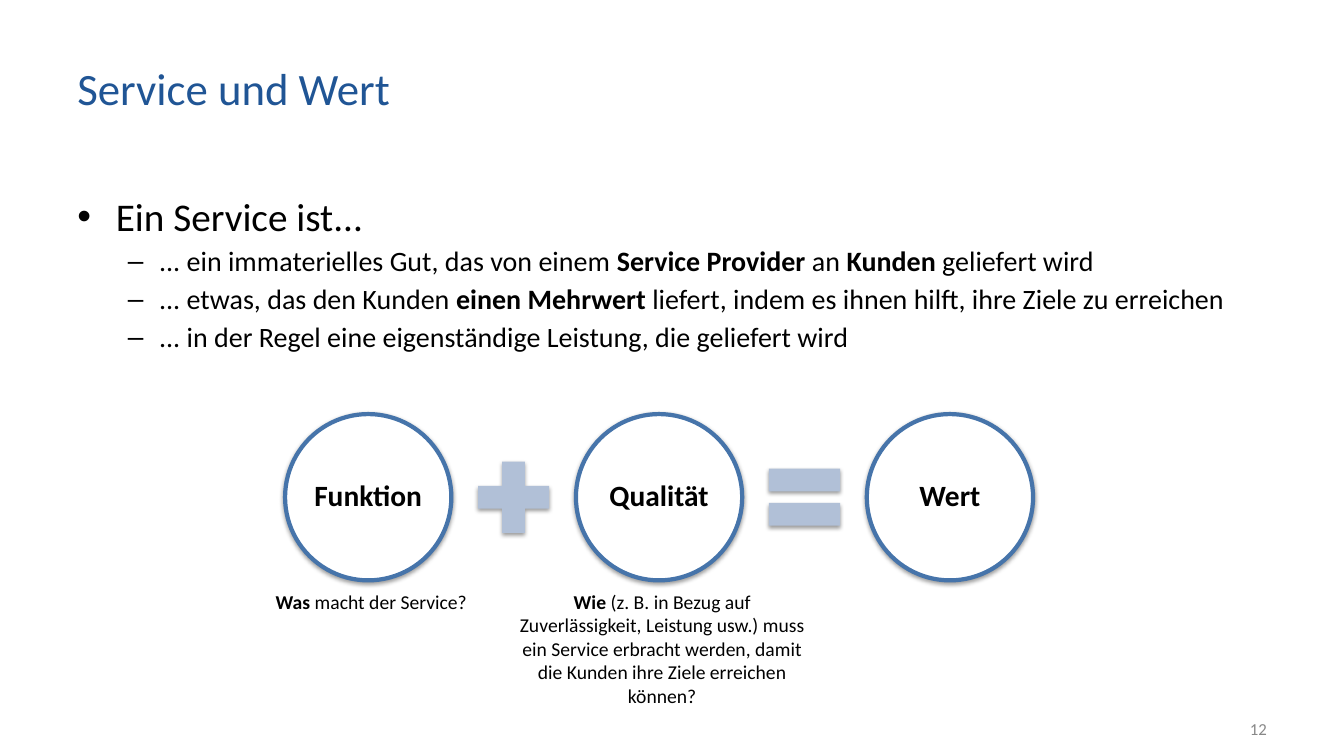
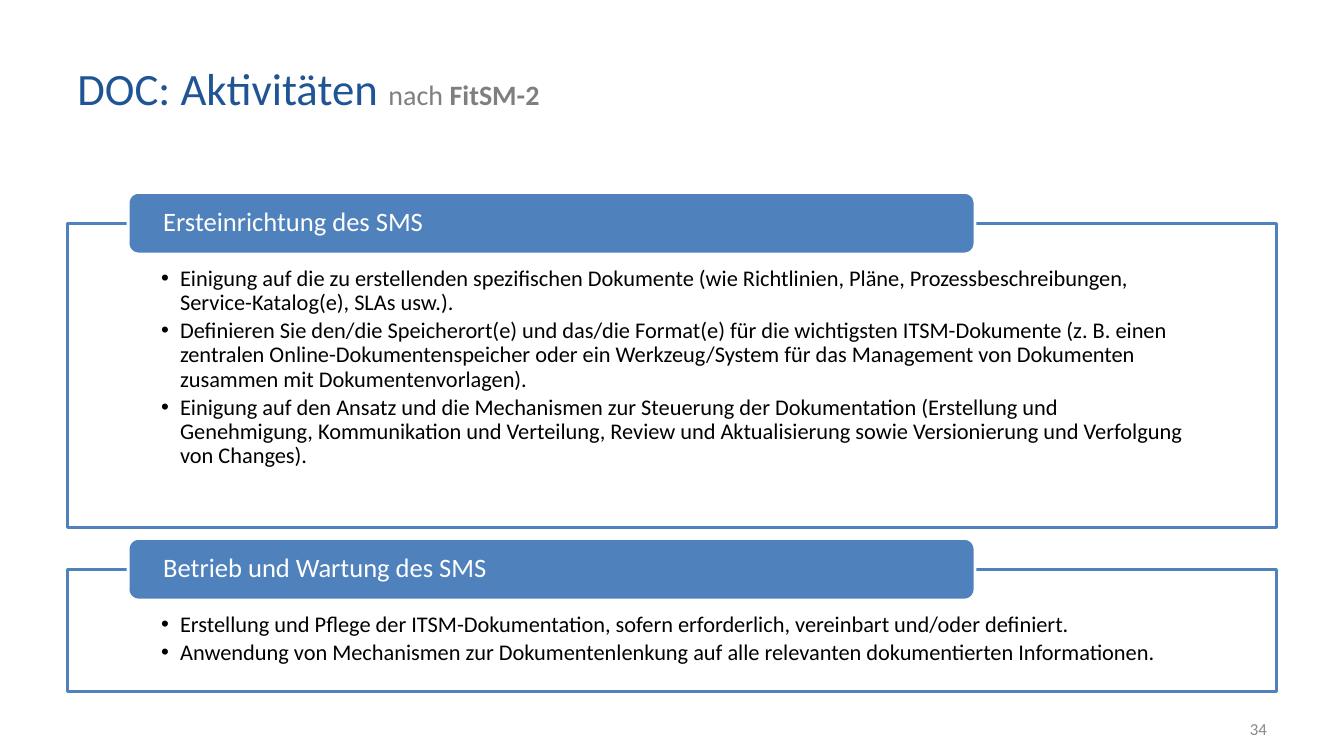
"""Builds two slides on service value and documentation activities."""
from lxml import etree
from pptx import Presentation
from pptx.dml.color import RGBColor
from pptx.enum.shapes import MSO_SHAPE
from pptx.enum.text import MSO_ANCHOR, MSO_AUTO_SIZE, PP_ALIGN
from pptx.oxml.ns import qn
from pptx.util import Cm, Pt

OVAL, RECT, ROUNDED = MSO_SHAPE.OVAL, MSO_SHAPE.RECTANGLE, MSO_SHAPE.ROUNDED_RECTANGLE
PLUS, EQUAL = MSO_SHAPE.MATH_PLUS, MSO_SHAPE.MATH_EQUAL
TOP, MIDDLE = MSO_ANCHOR.TOP, MSO_ANCHOR.MIDDLE
LEFT, CENTER, RIGHT = PP_ALIGN.LEFT, PP_ALIGN.CENTER, PP_ALIGN.RIGHT
NO_FIT = MSO_AUTO_SIZE.NONE
TITLE_AND_BODY, TITLE_ONLY = 1, 5

FONT = "Calibri"
COLORS = {
    "title": "205595", "muted": "7F7F7F", "number": "888888", "text": "000000",
    "white": "FFFFFF", "ring": "4674AA", "operator": "B1C0D7", "panel": "4F81BD",
}
MARGIN, CONTENT_WIDTH = 1.7, 30.48

VALUE_TITLE = "Service und Wert"
VALUE_LEAD = "Ein Service ist..."
VALUE_POINTS = [
    "... ein immaterielles Gut, das von einem *Service Provider *an *Kunden *geliefert wird",
    "... etwas, das den Kunden *einen Mehrwert *liefert, indem es ihnen hilft, ihre Ziele zu erreichen",
    "... in der Regel eine eigenständige Leistung, die geliefert wird",
]
VALUE_TERMS = ["Funktion", "Qualität", "Wert"]
OPERATORS = [(PLUS, [0.235]), (EQUAL, [0.235, 0.118])]
CAPTIONS = [
    ("*Was *macht der Service?", 7.04, 0.84),
    ("*Wie *(z. B. in Bezug auf Zuverlässigkeit, Leistung usw.) muss ein Service "
     "erbracht werden, damit die Kunden ihre Ziele erreichen können?", 7.85, 3.23),
]
ACTIVITY_TITLE = "DOC: Aktivitäten "
ACTIVITY_SOURCE = "nach *FitSM-2"
PANELS = [
    ("Ersteinrichtung des SMS", 7.65, [
        "Einigung auf die zu erstellenden spezifischen Dokumente (wie Richtlinien, Pläne, "
        "Prozessbeschreibungen, Service-Katalog(e), SLAs usw.).",
        "Definieren Sie den/die Speicherort(e) und das/die Format(e) für die wichtigsten "
        "ITSM-Dokumente (z. B. einen zentralen Online-Dokumentenspeicher oder ein "
        "Werkzeug/System für das Management von Dokumenten zusammen mit Dokumentenvorlagen).",
        "Einigung auf den Ansatz und die Mechanismen zur Steuerung der Dokumentation "
        "(Erstellung und Genehmigung, Kommunikation und Verteilung, Review und "
        "Aktualisierung sowie Versionierung und Verfolgung von Changes).",
    ]),
    ("Betrieb und Wartung des SMS", 3.07, [
        "Erstellung und Pflege der ITSM-Dokumentation, sofern erforderlich, vereinbart "
        "und/oder definiert.",
        "Anwendung von Mechanismen zur Dokumentenlenkung auf alle relevanten "
        "dokumentierten Informationen.",
    ]),
]


def color(name):
    return RGBColor.from_string(COLORS[name])


def write(paragraph, marked, size, ink="text", align=LEFT):
    """Adds runs to a paragraph; text between asterisks is bold."""
    paragraph.alignment = align
    for index, part in enumerate(marked.split("*")):
        if part:
            run = paragraph.add_run()
            run.text = part
            run.font.name, run.font.size = FONT, Pt(size)
            run.font.bold = index % 2 == 1
            run.font.color.rgb = color(ink)


def write_list(frame, items):
    """Fills a frame with (text, size, level, indent, hang, bullet, line, before)."""
    for index, (marked, size, level, indent, hang, bullet, line, before) in enumerate(items):
        paragraph = frame.add_paragraph() if index else frame.paragraphs[0]
        paragraph.level = level
        paragraph.line_spacing = line
        paragraph.space_before = Pt(before if index else 0)
        paragraph.space_after = Pt(0)
        properties = paragraph._p.get_or_add_pPr()
        properties.set("marL", str(Cm(indent)))
        properties.set("indent", str(-Cm(hang)))
        etree.SubElement(properties, qn("a:buFont")).set("typeface", "Arial")
        etree.SubElement(properties, qn("a:buChar")).set("char", bullet)
        write(paragraph, marked, size)


def set_frame(frame, anchor=TOP, insets=(0.25, 0.13, 0.25, 0.13)):
    frame.word_wrap, frame.auto_size, frame.vertical_anchor = True, NO_FIT, anchor
    frame.margin_left, frame.margin_top, frame.margin_right, frame.margin_bottom = map(Cm, insets)
    return frame


def place(item, left, top, width, height):
    item.left, item.top, item.width, item.height = map(Cm, (left, top, width, height))


def add_text(slide, box, marked, size, ink="text", align=CENTER, anchor=TOP):
    frame = set_frame(slide.shapes.add_textbox(*map(Cm, box)).text_frame, anchor)
    write(frame.paragraphs[0], marked, size, ink, align)


def add_block(slide, kind, box, fill, line=None, width=2, adjustments=()):
    block = slide.shapes.add_shape(kind, *map(Cm, box))
    block.shadow.inherit = False
    block.fill.solid()
    block.fill.fore_color.rgb = color(fill)
    if line:
        block.line.color.rgb = color(line)
        block.line.width = Pt(width)
    else:
        block.line.fill.background()
    for index, value in enumerate(adjustments):
        block.adjustments[index] = value
    return block


def cast_shadow(block):
    effects = block._element.spPr.find(qn("a:effectLst"))
    shadow = etree.SubElement(effects, qn("a:outerShdw"), blurRad=str(Pt(3.1)),
                              dist=str(Pt(1.6)), dir="5400000", rotWithShape="0")
    black = etree.SubElement(shadow, qn("a:srgbClr"), val=COLORS["text"])
    etree.SubElement(black, qn("a:alpha"), val="38000")


def add_slide(deck, layout, title, number):
    slide = deck.slides.add_slide(deck.slide_layouts[layout])
    heading = slide.shapes.title
    place(heading, MARGIN, 0.76, 25.15, 2.9)
    write(set_frame(heading.text_frame, MIDDLE).paragraphs[0], title, 32, "title")
    add_text(slide, (24.28, 17.86, 7.9, 1.02), number, 12, "number", RIGHT, MIDDLE)
    return slide


def build_value(deck):
    slide = add_slide(deck, TITLE_AND_BODY, VALUE_TITLE, "12")
    body = slide.placeholders[1]
    place(body, MARGIN, 4.72, CONTENT_WIDTH, 12.85)
    points = [(point, 20, 1, 2.06, 0.79, "–", 0.9, 5.6) for point in VALUE_POINTS]
    write_list(set_frame(body.text_frame),
               [(VALUE_LEAD, 28, 0, 0.97, 0.97, "•", 1.0, 0)] + points)

    first_center, step, middle, circle, sign = 9.28, 7.33, 12.53, 4.19, 2.44
    for index, term in enumerate(VALUE_TERMS):
        center = first_center + index * step
        ring = add_block(slide, OVAL, (center - circle / 2, middle - circle / 2, circle, circle),
                         "white", "ring", 3)
        cast_shadow(ring)
        label = set_frame(ring.text_frame, MIDDLE, (0.07,) * 4).paragraphs[0]
        label.line_spacing = 0.9
        write(label, f"*{term}", 21, align=CENTER)
    for index, (kind, adjustments) in enumerate(OPERATORS):
        center = first_center + (index + 0.5) * step
        cast_shadow(add_block(slide, kind, (center - sign / 2, middle - sign / 2, sign, sign),
                              "operator", adjustments=adjustments))
    for index, (caption, width, height) in enumerate(CAPTIONS):
        center = first_center + index * step + 0.08
        add_text(slide, (center - width / 2, 14.73, width, height), caption, 14)


def build_activities(deck):
    slide = add_slide(deck, TITLE_ONLY, ACTIVITY_TITLE, "34")
    write(slide.shapes.title.text_frame.paragraphs[0], ACTIVITY_SOURCE, 20, "muted")
    top, gap = 5.64, 1.07
    for name, height, activities in PANELS:
        panel = add_block(slide, RECT, (MARGIN, top, CONTENT_WIDTH, height), "white", "panel")
        write_list(set_frame(panel.text_frame, TOP, (2.36, 1.09, 2.36, 0.38)),
                   [(activity, 16, 1, 0.48, 0.48, "•", 0.9, 2.9) for activity in activities])
        header = add_block(slide, ROUNDED, (3.23, top - 0.79, 21.34, 1.55), "panel", "white",
                           adjustments=[0.167])
        label = set_frame(header.text_frame, MIDDLE, (0.81, 0, 0.81, 0)).paragraphs[0]
        label.line_spacing = 0.9
        write(label, name, 19, "white")
        top += height + gap


def main():
    deck = Presentation()
    deck.slide_width, deck.slide_height = Cm(33.87), Cm(19.05)
    build_value(deck)
    build_activities(deck)
    deck.save("out.pptx")


if __name__ == "__main__":
    main()
